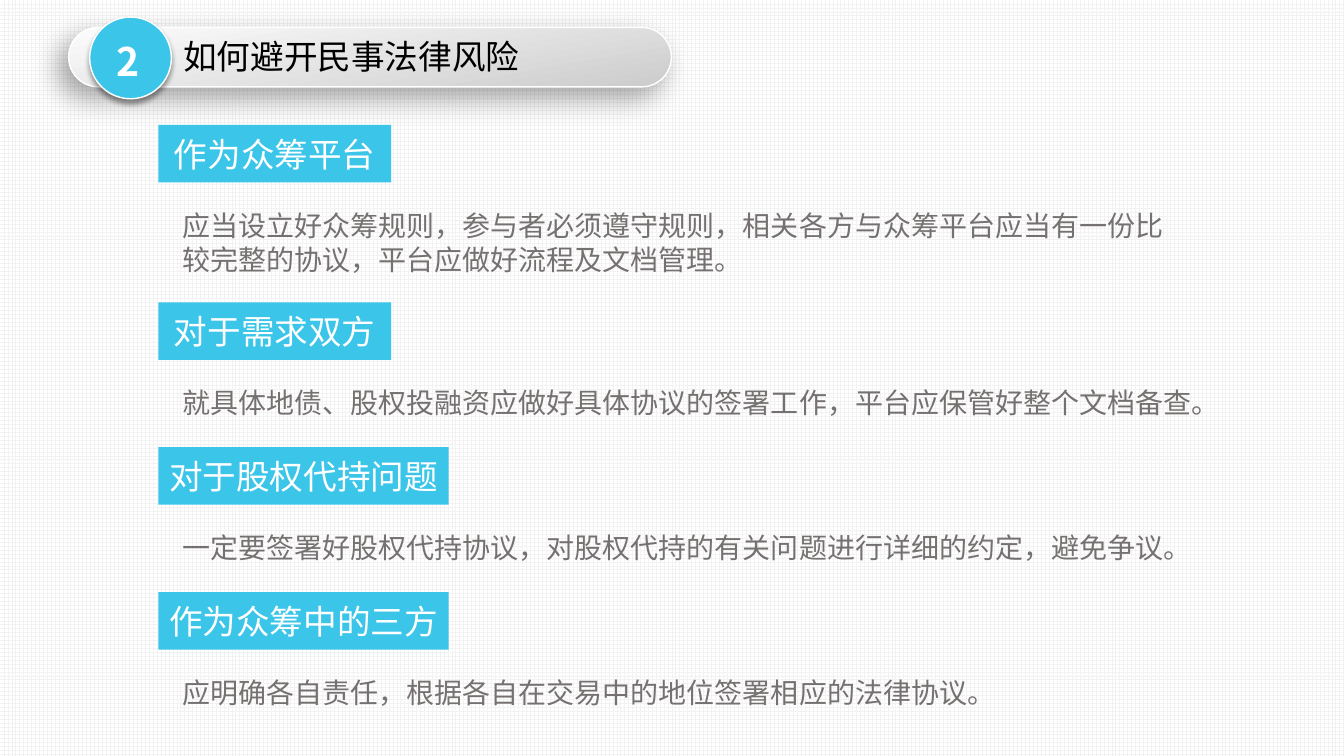
from dataclasses import dataclass

from lxml.etree import SubElement
from pptx import Presentation
from pptx.dml.color import RGBColor
from pptx.enum.dml import MSO_PATTERN
from pptx.enum.shapes import MSO_SHAPE as Shape
from pptx.enum.text import MSO_ANCHOR as Anchor, MSO_AUTO_SIZE as AutoSize, PP_ALIGN as Align
from pptx.oxml.ns import qn
from pptx.util import Cm, Pt


@dataclass(frozen=True)
class Theme:
    font: str = "Noto Sans CJK SC"
    accent: str = "3BC5E9"
    white: str = "FFFFFF"
    black: str = "000000"
    body: str = "767171"
    grid: str = "F2F2F2"
    pill_dark: str = "CCCCCC"
    pill_light: str = "FCFCFC"
    number_size: int = 28
    heading_size: int = 24
    body_size: int = 20


def rgb(value):
    return RGBColor.from_string(value)


def write_text(shape, text, *, font, size, color, bold=False, align=Align.LEFT, anchor=Anchor.TOP):
    frame = shape.text_frame
    frame.word_wrap = True
    frame.vertical_anchor = anchor
    para = frame.paragraphs[0]
    para.alignment = align
    span = para.add_run()
    span.text = text
    span.font.name = font
    span.font.size = Pt(size)
    span.font.bold = bold
    span.font.color.rgb = rgb(color)
    SubElement(span.font._element, qn("a:ea"), typeface=font)


def add_shadow(shape, color, opacity, blur, distance, angle):
    """Give an outer shadow: opacity in percent, lengths in points, angle in degrees."""
    shape.shadow.inherit = False
    effects = shape._element.spPr.find(qn("a:effectLst"))
    outer = SubElement(effects, qn("a:outerShdw"), blurRad=str(Pt(blur)), dist=str(Pt(distance)),
                       dir=str(angle * 60000), algn="ctr", rotWithShape="0")
    tint = SubElement(outer, qn("a:srgbClr"), val=color)
    SubElement(tint, qn("a:alpha"), val=str(opacity * 1000))


class SlideBuilder:
    def __init__(self, deck, theme):
        self.theme = theme
        self.slide = deck.slides.add_slide(deck.slide_layouts[6])

    def background(self):
        fill = self.slide.background.fill
        fill.patterned()
        fill.pattern = MSO_PATTERN.LARGE_GRID
        fill.fore_color.rgb = rgb(self.theme.grid)
        fill.back_color.rgb = rgb(self.theme.white)

    def shape(self, kind, bounds, line=None, parent=None):
        """Add an accent-coloured shape; bounds are left, top, width, height in cm."""
        shape = (parent or self.slide).shapes.add_shape(kind, *map(Cm, bounds))
        shape.shadow.inherit = False
        shape.fill.solid()
        shape.fill.fore_color.rgb = rgb(self.theme.accent)
        if line:
            shape.line.color.rgb = rgb(line)
            shape.line.width = Pt(1)
        else:
            shape.line.fill.background()
        return shape

    def text(self, text, bounds, parent=None, **style):
        box = (parent or self.slide).shapes.add_textbox(*map(Cm, bounds))
        write_text(box, text, font=self.theme.font, **style)
        box.text_frame.auto_size = AutoSize.SHAPE_TO_FIT_TEXT

    def title(self, number, text):
        theme = self.theme
        pill = self.shape(Shape.ROUNDED_RECTANGLE, (1.73, 0.69, 15.19, 1.5), theme.white)
        pill.adjustments[0] = 0.5
        pill.fill.gradient()
        pill.fill.gradient_angle = 100
        for stop, color in zip(pill.fill.gradient_stops, (theme.pill_dark, theme.pill_light)):
            stop.color.rgb = rgb(color)
        add_shadow(pill, theme.black, 34, 20, 10, 136)

        badge = self.slide.shapes.add_group_shape()
        circle = self.shape(Shape.OVAL, (2.26, 0.43, 2.06, 2.06), theme.white, badge)
        add_shadow(circle, theme.black, 40, 4, 3, 90)
        self.text(number, (2.18, 0.81, 2.11, 1.45), badge, size=theme.number_size,
                  color=theme.white, bold=True, align=Align.CENTER)
        self.text(text, (4.37, 0.79, 11.53, 1.27), size=theme.heading_size, color=theme.black)

    def section(self, top, heading, heading_width, body, body_width, body_height):
        """Add a heading tag with its paragraph and return the top of the next section."""
        theme = self.theme
        tag = self.shape(Shape.RECTANGLE, (3.99, top, heading_width, 1.45))
        write_text(tag, heading, font=theme.font, size=theme.heading_size, color=theme.white,
                   align=Align.CENTER, anchor=Anchor.MIDDLE)
        body_top = top + 1.98
        self.text(body, (4.34, body_top, body_width, body_height),
                  size=theme.body_size, color=theme.body)
        return body_top + body_height + 0.55


SECTIONS = [
    ("作为众筹平台", 5.87,
     "应当设立好众筹规则，参与者必须遵守规则，相关各方与众筹平台应当有一份比较完整的协议，平台应做好流程及文档管理。",
     25.93, 1.94),
    ("对于需求双方", 5.87,
     "就具体地债、股权投融资应做好具体协议的签署工作，平台应保管好整个文档备查。", 26.7, 1.12),
    ("对于股权代持问题", 7.32,
     "一定要签署好股权代持协议，对股权代持的有关问题进行详细的约定，避免争议。", 25.93, 1.12),
    ("作为众筹中的三方", 7.32,
     "应明确各自责任，根据各自在交易中的地位签署相应的法律协议。", 25.93, 1.12),
]


def main():
    deck = Presentation()
    deck.slide_width, deck.slide_height = Cm(33.87), Cm(19.05)
    page = SlideBuilder(deck, Theme())
    page.background()
    page.title("2", "如何避开民事法律风险")
    top = 3.15
    for section in SECTIONS:
        top = page.section(top, *section)
    deck.save("out.pptx")


if __name__ == "__main__":
    main()
